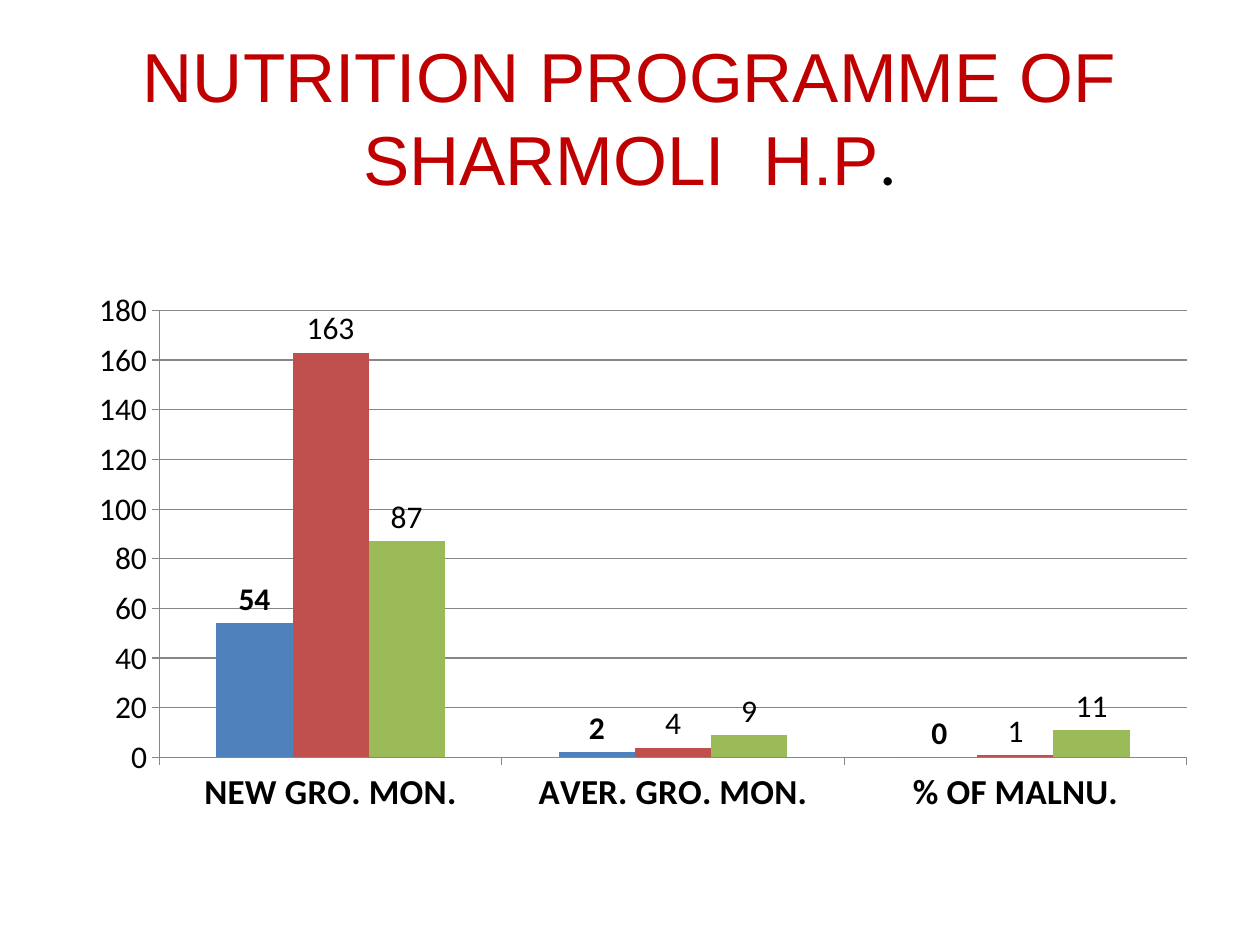
"""Build a slide with a title and a clustered column chart."""
from lxml import etree
from pptx import Presentation
from pptx.chart.data import CategoryChartData
from pptx.dml.color import RGBColor
from pptx.enum.chart import XL_CHART_TYPE, XL_LABEL_POSITION, XL_TICK_MARK
from pptx.enum.text import MSO_ANCHOR, PP_ALIGN
from pptx.oxml.ns import qn
from pptx.util import Cm, Pt

COLUMN = XL_CHART_TYPE.COLUMN_CLUSTERED
ABOVE = XL_LABEL_POSITION.OUTSIDE_END
OUT = XL_TICK_MARK.OUTSIDE
MIDDLE = MSO_ANCHOR.MIDDLE
CENTER = PP_ALIGN.CENTER

BLACK = RGBColor(0x00, 0x00, 0x00)
GRAY = RGBColor(0x87, 0x87, 0x87)
DARK_RED = RGBColor(0xC0, 0x00, 0x00)
BLUE = RGBColor(0x4F, 0x81, 0xBD)
RED = RGBColor(0xC0, 0x50, 0x4D)
GREEN = RGBColor(0x9B, 0xBB, 0x59)

TITLE = [
    ("NUTRITION PROGRAMME OF SHARMOLI  H.P", "Arial", DARK_RED),
    (".", "Calibri", BLACK),
]
GROUPS = ["NEW GRO. MON.", "AVER. GRO. MON.", "% OF MALNU."]
SERIES = [
    ("Series 1", (54, 2, 0), BLUE, True),
    ("Series 2", (163, 4, 1), RED, False),
    ("Series 3", (87, 9, 11), GREEN, False),
]
PLOT = {
    "layoutTarget": "inner", "xMode": "edge", "yMode": "edge",
    "x": 0.085, "y": 0.144, "w": 0.906, "h": 0.717,
}
LEFT, WIDTH = Cm(1.27), Cm(22.86)


def set_font(font, size, bold=False):
    font.name, font.size, font.bold = "Calibri", Pt(size), bold
    font.color.rgb = BLACK


def add_title(slide):
    box = slide.shapes.add_textbox(LEFT, Cm(0.76), WIDTH, Cm(3.18))
    frame = box.text_frame
    frame.word_wrap = True
    frame.vertical_anchor = MIDDLE
    para = frame.paragraphs[0]
    para.alignment = CENTER
    para.font.size = Pt(39.6)
    for text, face, color in TITLE:
        run = para.add_run()
        run.text = text
        run.font.name = face
        run.font.size = Pt(39.6)
        run.font.color.rgb = color


def place_plot(chart):
    area = chart.element.find(".//" + qn("c:plotArea"))
    for old in area.findall(qn("c:layout")):
        area.remove(old)
    layout = etree.Element(qn("c:layout"))
    manual = etree.SubElement(layout, qn("c:manualLayout"))
    for key, value in PLOT.items():
        etree.SubElement(manual, qn("c:" + key)).set("val", str(value))
    area.insert(0, layout)


def add_chart(slide):
    data = CategoryChartData()
    data.categories = GROUPS
    for name, values, _, _ in SERIES:
        data.add_series(name, values)
    frame = slide.shapes.add_chart(COLUMN, LEFT, Cm(4.45), WIDTH, Cm(12.57), data)
    chart = frame.chart
    chart.has_legend = chart.has_title = False
    set_font(chart.font, 18)
    place_plot(chart)

    plot = chart.plots[0]
    plot.vary_by_categories = False
    plot.gap_width, plot.overlap = 150, 0
    for series, (_, _, color, bold) in zip(plot.series, SERIES):
        series.format.fill.solid()
        series.format.fill.fore_color.rgb = color
        labels = series.data_labels
        labels.show_value = True
        labels.position = ABOVE
        set_font(labels.font, 18, bold)

    groups, scale = chart.category_axis, chart.value_axis
    scale.minimum_scale, scale.maximum_scale, scale.major_unit = 0, 180, 20
    scale.has_major_gridlines = True
    for axis, size, bold in ((groups, 20, True), (scale, 18, False)):
        axis.major_tick_mark = OUT
        set_font(axis.tick_labels.font, size, bold)
    for part in (groups, scale, scale.major_gridlines):
        part.format.line.color.rgb = GRAY
        part.format.line.width = Pt(0.75)


def main():
    deck = Presentation()
    deck.slide_width, deck.slide_height = Cm(25.4), Cm(19.05)
    slide = deck.slides.add_slide(deck.slide_layouts[6])
    add_title(slide)
    add_chart(slide)
    deck.save("out.pptx")


if __name__ == "__main__":
    main()
